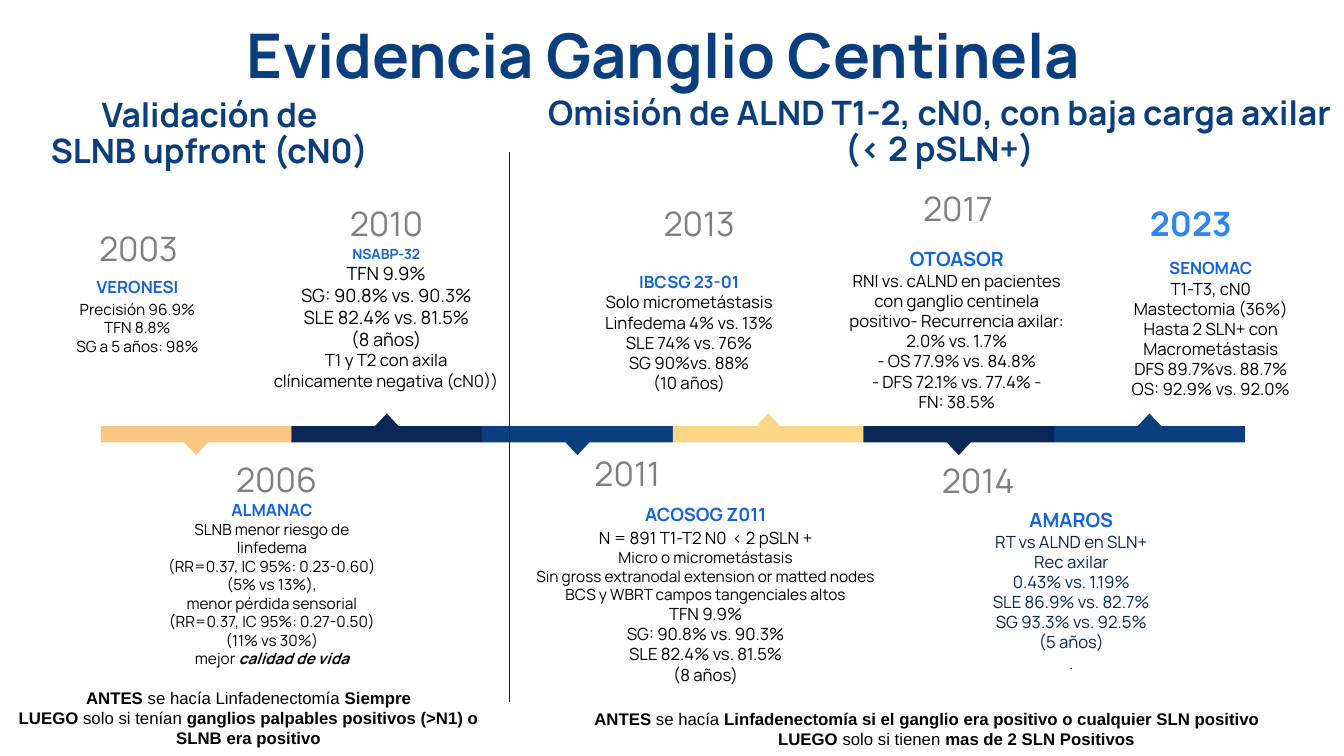
import dataclasses

import pptx
import pptx.dml.color
import pptx.enum.shapes
import pptx.enum.text
import pptx.oxml.ns
import pptx.util
from lxml import etree

Cm = pptx.util.Cm
Align = pptx.enum.text.PP_ALIGN


@dataclasses.dataclass(frozen=True)
class Theme:
    font: str = "Manrope"
    note_font: str = "Arial"
    black: str = "000000"
    gray: str = "7F7F7F"
    bright: str = "2D85EE"
    study: str = "1363DA"
    blue: str = "0A3E7C"
    navy: str = "092755"
    divider: str = "062554"
    orange: str = "F8C680"
    yellow: str = "FBD785"
    title: int = 44
    heading: int = 24
    large: int = 14
    medium: int = 13
    body: int = 12
    small: int = 11
    tiny: int = 10


THEME = Theme()


def rgb(code):
    return pptx.dml.color.RGBColor.from_string(code)


def write(frame, paragraphs, align=Align.CENTER, spacing=None, **base):
    """Fill a frame; a paragraph is a string or a list of (text, format) spans."""
    frame.word_wrap = True
    frame.vertical_anchor = pptx.enum.text.MSO_ANCHOR.TOP
    for index, spans in enumerate(paragraphs):
        para = frame.paragraphs[0] if index == 0 else frame.add_paragraph()
        para.alignment = align
        para.space_before = pptx.util.Pt(0)
        if spacing:
            para.line_spacing = spacing
        for text, changes in [(spans, {})] if isinstance(spans, str) else spans:
            look = {"font": THEME.font, "size": THEME.body, "color": THEME.black,
                    "bold": False, "italic": False, **base, **changes}
            span = para.add_run()
            span.text = text
            span.font.name = look["font"]
            span.font.size = pptx.util.Pt(look["size"])
            span.font.color.rgb = rgb(look["color"])
            span.font.bold = look["bold"]
            span.font.italic = look["italic"]


def add_text(page, place, paragraphs, **look):
    box = page.shapes.add_textbox(*map(Cm, place))
    write(box.text_frame, paragraphs, **look)
    return box.text_frame


def add_title(page, text):
    title = page.shapes.title
    title.left, title.top, title.width, title.height = map(Cm, (5.97, 0.51, 26.31, 1.45))
    title.text_frame.auto_size = pptx.enum.text.MSO_AUTO_SIZE.NONE
    write(title.text_frame, [text], align=Align.LEFT, spacing=0.9,
          size=THEME.title, color=THEME.blue, bold=True)


def add_heading(page, place, lines):
    add_text(page, place, lines, spacing=0.9, size=THEME.heading,
             color=THEME.blue, bold=True)


def add_year(page, left, top, year, color=THEME.gray, bold=False):
    add_text(page, (left, top, 4.04, 1.27), [year], size=THEME.heading,
             color=color, bold=bold)


def add_study(page, place, name, lines, name_size=THEME.body, **look):
    name_look = {"size": name_size, "color": THEME.study, "bold": True}
    return add_text(page, place, [[(name, name_look)], *lines], **look)


def sized(text, size):
    return [(text, {"size": size})]


def contrast(*texts):
    """Alternate bold and regular spans, starting with bold."""
    return [(text, {"bold": index % 2 == 0}) for index, text in enumerate(texts)]


def add_timeline(page):
    """Draw bar segments whose pointers alternate below and above."""
    left, width, top, bottom = 2.54, 4.805, 10.74, 11.15
    half, tip = 0.3, 0.32
    colors = (THEME.orange, THEME.navy, THEME.blue, THEME.yellow, THEME.navy, THEME.blue)
    for index, color in enumerate(colors):
        start = left + index * width
        end, middle = start + width, start + width / 2
        below = index % 2 == 0
        flat, pointed = (top, bottom) if below else (bottom, top)
        peak = bottom + tip if below else top - tip
        points = [(end, flat), (end, pointed), (middle + half, pointed),
                  (middle, peak), (middle - half, pointed), (start, pointed)]
        builder = page.shapes.build_freeform(Cm(start), Cm(flat))
        builder.add_line_segments([(Cm(x), Cm(y)) for x, y in points], close=True)
        segment = builder.convert_to_shape()
        segment.shadow.inherit = False
        segment.fill.solid()
        segment.fill.fore_color.rgb = rgb(color)
        segment.line.fill.background()


def add_divider(page):
    line = page.shapes.add_connector(pptx.enum.shapes.MSO_CONNECTOR.STRAIGHT,
                                     Cm(12.83), Cm(3.84), Cm(12.83), Cm(17.68))
    line.line.color.rgb = rgb(THEME.divider)
    line.line.width = pptx.util.Pt(0.75)
    etree.SubElement(line._element.spPr, pptx.oxml.ns.qn("a:effectLst"))


def add_validation_studies(page):
    add_year(page, 1.47, 5.61, "2003")
    veronesi = add_study(page, (0.38, 6.86, 6.17, 2.26), "VERONESI", [
        "Precisión 96.9%", "TFN 8.8%", "SG a 5 años: 98%"], size=THEME.small)
    veronesi.paragraphs[1].line_spacing = 1.15
    add_year(page, 4.95, 11.43, "2006")
    add_study(page, (3.91, 12.47, 5.89, 4.52), "ALMANAC", [
        "SLNB menor riesgo de linfedema", "(RR=0.37, IC 95%: 0.23-0.60)",
        "(5% vs 13%),", "menor pérdida sensorial (RR=0.37, IC 95%: 0.27-0.50)",
        "(11% vs 30%)",
        [("mejor", {}), (" calidad de vida", {"bold": True, "italic": True})],
    ], size=THEME.small)
    add_year(page, 7.72, 5, "2010")
    add_study(page, (6.65, 6.07, 6.17, 3.94), "NSABP-32", [
        "TFN 9.9%", "SG: 90.8% vs. 90.3%", "SLE 82.4% vs. 81.5%", "(8 años)",
        sized("T1 y T2 con axila clínicamente negativa (cN0))", THEME.body),
    ], name_size=THEME.tiny, size=THEME.medium)


def add_omission_studies(page):
    add_year(page, 13.79, 11.28, "2011")
    add_study(page, (12.83, 12.55, 9.91, 6.02), "ACOSOG Z011", [
        [("N = 891 T1-T2 N0", {}),
         (" ", {"font": THEME.note_font, "size": THEME.large}),
         ("< 2 pSLN +", {})],
        sized("Micro o micrometástasis", THEME.small),
        sized("Sin gross extranodal extension or matted nodes", THEME.small),
        sized("BCS y WBRT campos tangenciales altos", THEME.small),
        "TFN 9.9%", "SG: 90.8% vs. 90.3%", "SLE 82.4% vs. 81.5%", "(8 años)",
    ], name_size=THEME.medium)
    add_year(page, 15.6, 5, "2013")
    add_study(page, (14.73, 6.73, 5.28, 3.94), "IBCSG 23-01", [
        "Solo micrometástasis", "Linfedema 4% vs. 13%", "SLE 74% vs. 76%",
        "SG 90%vs. 88%", "(10 años)"])
    add_year(page, 22.63, 11.46, "2014")
    add_study(page, (24.56, 12.67, 4.88, 4.45), "AMAROS", [
        "RT vs ALND en SLN+", "Rec axilar", "0.43% vs. 1.19%",
        "SLE 86.9% vs. 82.7%", "SG 93.3% vs. 92.5%", "(5 años)", "."],
        name_size=THEME.large, color=THEME.navy)
    add_year(page, 22.12, 4.62, "2017")
    add_study(page, (21.03, 6.1, 6.17, 4.45), "OTOASOR", [
        "RNI vs. cALND en pacientes con ganglio centinela positivo- Recurrencia axilar:",
        "2.0% vs. 1.7%", "- OS 77.9% vs. 84.8%", "- DFS 72.1% vs. 77.4% -",
        "FN: 38.5%"], name_size=THEME.large)
    add_year(page, 27.99, 5, "2023", color=THEME.bright, bold=True)
    add_study(page, (27.58, 6.38, 5.87, 4.37), "SENOMAC", [
        "T1-T3, cN0", "Mastectomia (36%)", "Hasta 2 SLN+ con Macrometástasis",
        "DFS 89.7%vs. 88.7%", "OS: 92.9% vs. 92.0%"])


def add_practice_notes(page):
    add_text(page, (0.03, 17.2, 12.47, 1.8), [
        contrast("ANTES ", "se hacía Linfadenectomía ", "Siempre"),
        contrast("LUEGO ", "solo si tenían ",
                 "ganglios palpables positivos (>N1) o SLNB era positivo"),
    ], font=THEME.note_font)
    omission = add_text(page, (14.73, 17.73, 18.75, 1.27), [
        contrast("ANTES ", "se hacía ",
                 "Linfadenectomía si el ganglio era positivo o cualquier SLN positivo"),
        contrast("LUEGO ", "solo si tienen ", "mas de 2 SLN Positivos"),
    ], font=THEME.note_font)
    omission.paragraphs[0].alignment = Align.LEFT


def main():
    deck = pptx.Presentation()
    deck.slide_width, deck.slide_height = Cm(33.87), Cm(19.05)
    page = deck.slides.add_slide(deck.slide_layouts.get_by_name("Title Only"))
    add_title(page, "Evidencia Ganglio Centinela")
    add_heading(page, (0.81, 2.36, 8.94, 2.03), ["Validación de", "SLNB upfront (cN0)"])
    add_heading(page, (12.83, 2.31, 21.69, 2.13),
                ["Omisión de ALND T1-2, cN0, con baja carga axilar", "(< 2 pSLN+)"])
    add_timeline(page)
    add_validation_studies(page)
    add_omission_studies(page)
    add_divider(page)
    add_practice_notes(page)
    deck.save("out.pptx")


if __name__ == "__main__":
    main()
